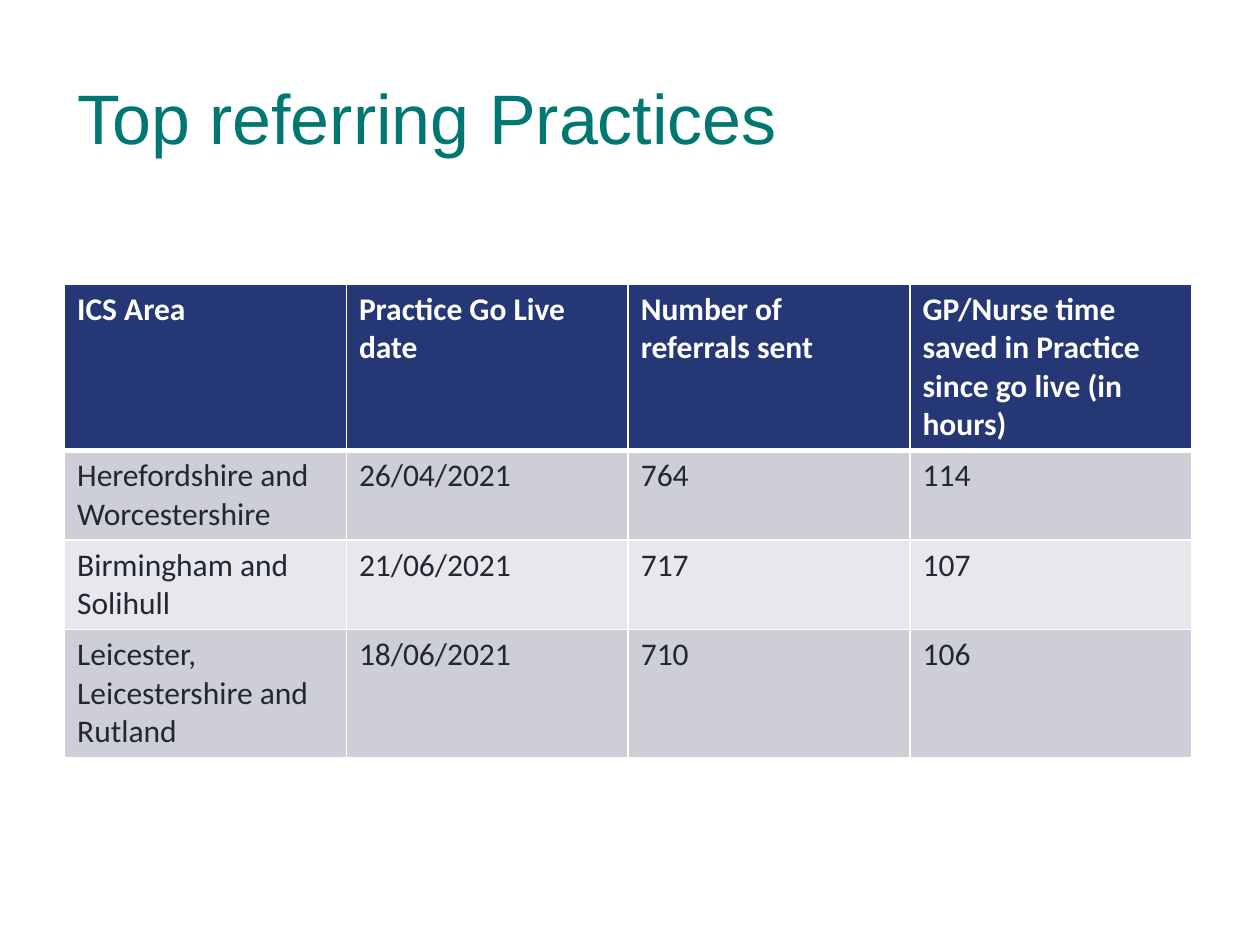
from lxml import etree
from pptx import Presentation
from pptx.dml.color import RGBColor
from pptx.enum.text import MSO_ANCHOR, MSO_AUTO_SIZE, PP_ALIGN
from pptx.oxml.ns import qn
from pptx.util import Pt

MIDDLE = MSO_ANCHOR.MIDDLE
NO_AUTOFIT = MSO_AUTO_SIZE.NONE
LEFT = PP_ALIGN.LEFT

MARGIN, CONTENT_WIDTH = 36.9, 644.2
WHITE, TEAL, NAVY, INK = "FFFFFF", "007771", "263776", "212734"
BANDS = ("CDCED6", "E8E8EC")
ROW_HEIGHTS = (94, 51, 51, 73)
ROWS = (
    ("ICS Area", "Practice Go Live date", "Number of referrals sent",
     "GP/Nurse time saved in Practice since go live (in hours)"),
    ("Herefordshire and Worcestershire", "26/04/2021", "764", "114"),
    ("Birmingham and Solihull", "21/06/2021", "717", "107"),
    ("Leicester, Leicestershire and Rutland", "18/06/2021", "710", "106"),
)


def rgb(value):
    return RGBColor.from_string(value)


def add_run(p, text, font, size, color, bold=False):
    r = p.add_run()
    r.text = text
    r.font.name = font
    r.font.size = Pt(size)
    r.font.bold = bold
    r.font.color.rgb = rgb(color)


def add_title(s, text):
    sp = s.shapes.title
    sp.left, sp.top = Pt(MARGIN), Pt(17.3)
    sp.width, sp.height = Pt(CONTENT_WIDTH), Pt(104.4)
    tf = sp.text_frame
    tf.word_wrap = True
    tf.auto_size = NO_AUTOFIT
    tf.vertical_anchor = MIDDLE
    p = tf.paragraphs[0]
    p.alignment = LEFT
    p.line_spacing = 0.9
    add_run(p, text, "Arial", 40, TEAL)


def set_borders(cell, color, widths):
    props = cell._tc.get_or_add_tcPr()
    for side, width in widths.items():
        line = etree.SubElement(props, qn(f"a:ln{side}"), w=str(Pt(width)))
        fill = etree.SubElement(line, qn("a:solidFill"))
        etree.SubElement(fill, qn("a:srgbClr"), val=color)


def add_table(s, rows):
    table = s.shapes.add_table(
        len(rows), len(rows[0]), Pt(MARGIN), Pt(162.2),
        Pt(CONTENT_WIDTH), Pt(sum(ROW_HEIGHTS))).table
    for col in table.columns:
        col.width = Pt(CONTENT_WIDTH / len(rows[0]))
    for i, values in enumerate(rows):
        table.rows[i].height = Pt(ROW_HEIGHTS[i])
        header = i == 0
        for j, value in enumerate(values):
            cell = table.cell(i, j)
            set_borders(cell, WHITE, {"L": 1, "R": 1, "T": 3 if i == 1 else 1,
                                      "B": 3 if header else 1})
            cell.fill.solid()
            cell.fill.fore_color.rgb = rgb(NAVY if header else BANDS[(i - 1) % 2])
            add_run(cell.text_frame.paragraphs[0], value, "Calibri", 18,
                    WHITE if header else INK, header)


def main():
    prs = Presentation()
    prs.slide_width, prs.slide_height = Pt(720), Pt(540)
    s = prs.slides.add_slide(prs.slide_layouts[5])
    add_title(s, "Top referring Practices")
    add_table(s, ROWS)
    prs.save("out.pptx")


if __name__ == "__main__":
    main()
